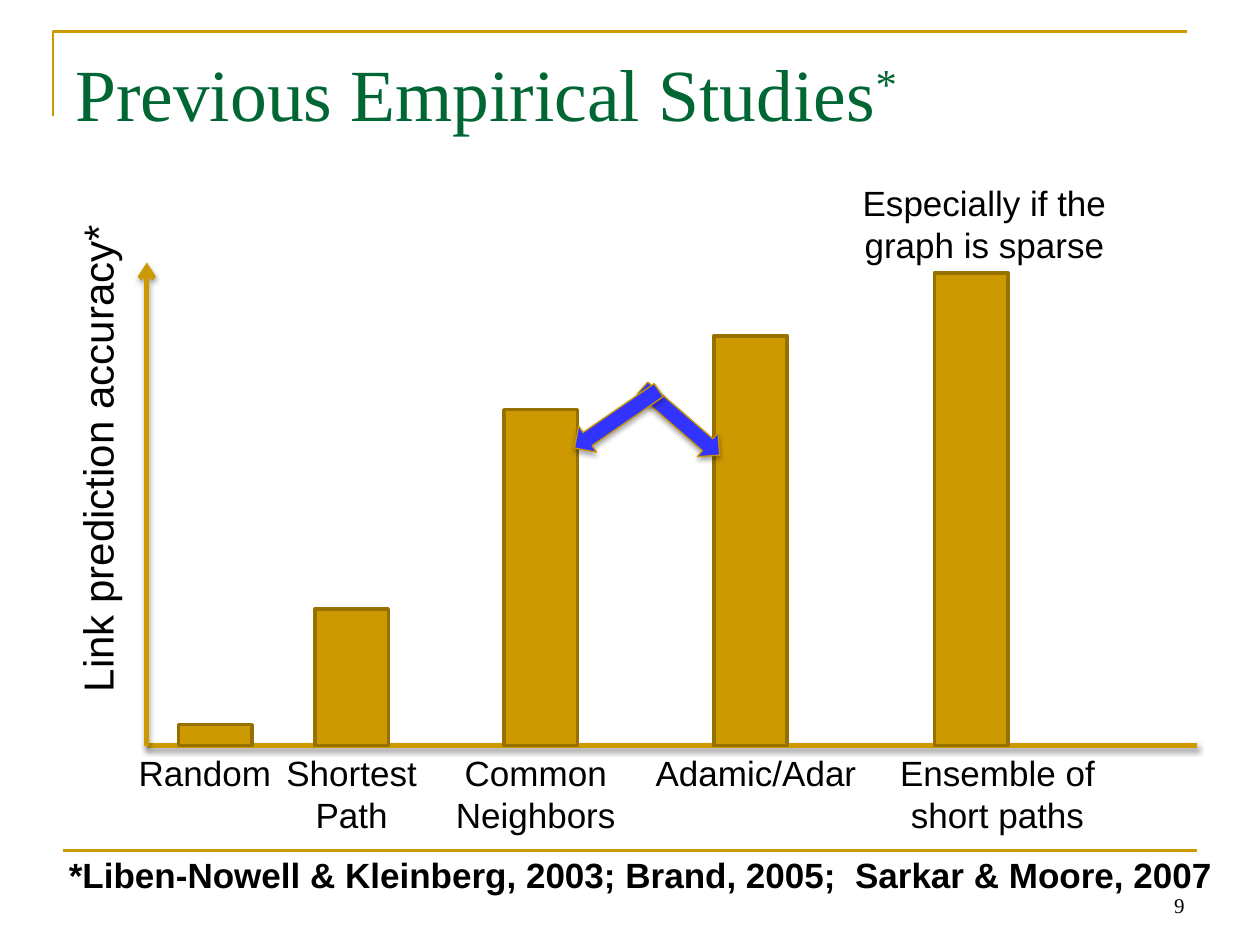
from lxml import etree
from pptx import Presentation
from pptx import util as u
from pptx.dml.color import RGBColor
from pptx.enum import shapes, text
from pptx.oxml.ns import qn

GOLD = RGBColor(0xCC, 0x99, 0x00)
DARK_GOLD = RGBColor(0x97, 0x71, 0x00)
ARROW_EDGE = RGBColor(0xC8, 0x96, 0x00)
BLUE = RGBColor(0x33, 0x33, 0xFF)
GREEN = RGBColor(0x00, 0x66, 0x33)
BLACK = RGBColor(0x00, 0x00, 0x00)

BASELINE = 15.03
AXIS_LEFT = 2.96
BAR_WIDTH = 1.48
BARS = [
    (3.6, 0.42, "Random", 2.33, 3.6),
    (6.35, 2.75, "Shortest Path", 5.29, 3.6),
    (10.16, 6.77, "Common Neighbors", 8.47, 4.66),
    (14.39, 8.26, "Adamic/Adar", 12.7, 5.08),
    (18.84, 9.53, "Ensemble of short paths", 17.57, 5.08),
]
ARROWS = [(12.7, 8.18, 41), (11.4, 8.13, 145.5)]


def apply(target, values):
    for name, value in values.items():
        setattr(target, name, value)


def set_effect(shape, shadow):
    effects = etree.SubElement(shape._element.spPr, qn("a:effectLst"))
    if shadow:
        outer = etree.SubElement(
            effects, qn("a:outerShdw"), blurRad=str(u.Pt(3.1)),
            dist=str(u.Pt(1.8)), dir="5400000", rotWithShape="0")
        color = etree.SubElement(outer, qn("a:srgbClr"), val="000000")
        etree.SubElement(color, qn("a:alpha"), val="35000")


def add_line(slide, start, end, width, shadow=False, arrow=False):
    points = [u.Cm(value) for value in (*start, *end)]
    line = slide.shapes.add_connector(shapes.MSO_CONNECTOR.STRAIGHT, *points)
    line.line.color.rgb = GOLD
    line.line.width = u.Pt(width)
    if arrow:
        etree.SubElement(line.line._get_or_add_ln(), qn("a:tailEnd"), type="arrow")
    set_effect(line, shadow)


def add_block(slide, kind, box, fill, edge, width, rotation=0, shadow=False):
    shape = slide.shapes.add_shape(kind, *map(u.Cm, box))
    shape.rotation = rotation
    shape.fill.solid()
    shape.fill.fore_color.rgb = fill
    shape.line.color.rgb = edge
    shape.line.width = u.Pt(width)
    set_effect(shape, shadow)


def add_text(slide, box, words, font=None, frame=None,
             align=text.PP_ALIGN.CENTER, rotation=0):
    shape = slide.shapes.add_textbox(*map(u.Cm, box))
    shape.rotation = rotation
    apply(shape.text_frame, {"word_wrap": True, **(frame or {})})
    paragraph = shape.text_frame.paragraphs[0]
    paragraph.alignment = align
    run = paragraph.add_run()
    run.text = words
    format_run(run, font or {})
    return paragraph


def format_run(run, font):
    values = {"name": "Arial", "size": u.Pt(20), **font}
    run.font.color.rgb = values.pop("color", BLACK)
    apply(run.font, values)


def add_title(slide):
    builder = slide.shapes.build_freeform(u.Cm(1.07), u.Cm(2.34))
    builder.add_line_segments(
        [(u.Cm(1.07), u.Cm(0.64)), (u.Cm(23.93), u.Cm(0.64))], close=False)
    corner = builder.convert_to_shape()
    corner.fill.background()
    corner.line.color.rgb = GOLD
    corner.line.width = u.Pt(1.5)
    corner.shadow.inherit = False

    font = {"name": "Times New Roman", "size": u.Pt(42), "color": GREEN}
    paragraph = add_text(slide, (1.27, 0.66, 23.29, 2.57), "Previous Empirical Studies",
                         font, {"margin_top": u.Cm(0.3)}, text.PP_ALIGN.LEFT)
    star = paragraph.add_run()
    star.text = "*"
    format_run(star, font)
    star.font._element.set("baseline", "30000")


def add_bars(slide):
    add_line(slide, (AXIS_LEFT, BASELINE), (24.13, BASELINE), 3, shadow=True)
    for left, height, label, label_left, label_width in BARS:
        add_block(slide, shapes.MSO_SHAPE.RECTANGLE,
                  (left, BASELINE - height, BAR_WIDTH, height), GOLD, DARK_GOLD, 2)
        add_text(slide, (label_left, BASELINE, label_width, 1.96), label)
    add_line(slide, (AXIS_LEFT, BASELINE), (AXIS_LEFT, 5.29), 3, shadow=True, arrow=True)
    add_text(slide, (-3.71, 8.61, 11.33, 1.27), "Link prediction accuracy*",
             {"size": u.Pt(24)}, rotation=270)
    add_text(slide, (16.82, 3.53, 6.05, 1.96), "Especially if the graph is sparse")
    for left, top, rotation in ARROWS:
        add_block(slide, shapes.MSO_SHAPE.RIGHT_ARROW, (left, top, 2.06, 0.64),
                  BLUE, ARROW_EDGE, 0.75, rotation, shadow=True)


def add_footer(slide):
    add_line(slide, (1.27, 17.15), (24.13, 17.15), 1.5)
    add_text(slide, (1.07, 17.09, 23.7, 1.12),
             "*Liben-Nowell & Kleinberg, 2003; Brand, 2005;  Sarkar & Moore, 2007",
             {"bold": True})
    add_text(slide, (18.21, 17.35, 5.92, 1.27), "9",
             {"name": "Times New Roman", "size": u.Pt(12)},
             {"vertical_anchor": text.MSO_ANCHOR.BOTTOM}, text.PP_ALIGN.RIGHT)


def main():
    presentation = Presentation()
    apply(presentation, {"slide_width": u.Cm(25.4), "slide_height": u.Cm(19.05)})
    slide = presentation.slides.add_slide(presentation.slide_layouts[6])
    add_title(slide)
    add_bars(slide)
    add_footer(slide)
    presentation.save("out.pptx")


if __name__ == "__main__":
    main()
